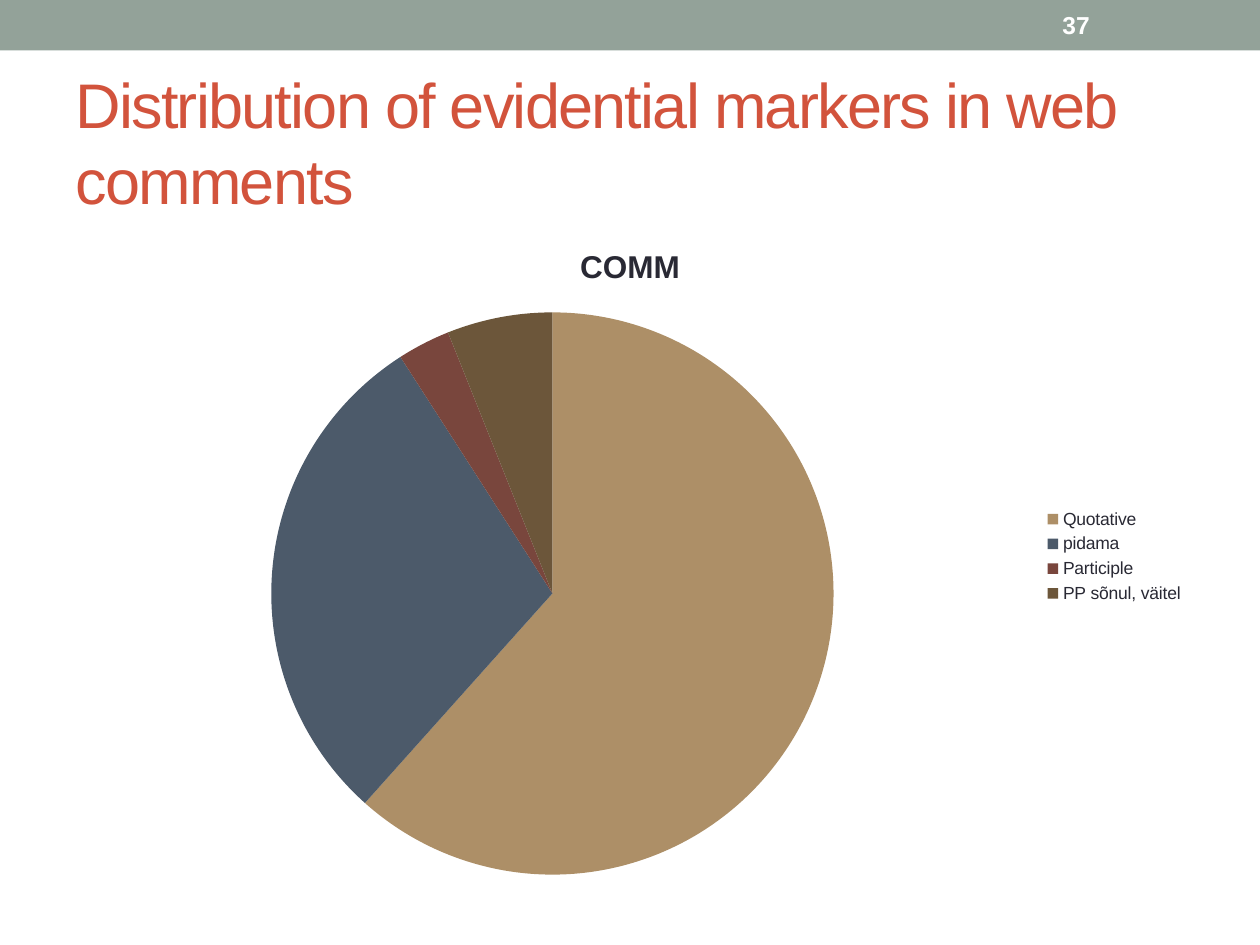
import pptx
import pptx.chart.data
import pptx.dml.color
import pptx.enum.chart
import pptx.enum.shapes
import pptx.enum.text
import pptx.util

RGB = pptx.dml.color.RGBColor
SAGE = RGB(0x93, 0xA2, 0x99)
RED = RGB(0xD2, 0x53, 0x3C)
WHITE = RGB(0xFF, 0xFF, 0xFF)
INK = RGB(0x29, 0x29, 0x34)
TAN = RGB(0xAD, 0x8F, 0x67)
SLATE = RGB(0x4C, 0x5A, 0x6A)
MAROON = RGB(0x79, 0x46, 0x3D)
BROWN = RGB(0x6C, 0x56, 0x3A)

FONT = "Arial"
WIDTH, HEIGHT = 10, 7.5
MARGIN = 0.05 * WIDTH
CONTENT_WIDTH = WIDTH - 2 * MARGIN

# category, value, slice colour
MARKERS = [
    ("Quotative", 61, TAN),
    ("pidama", 29, SLATE),
    ("Participle", 3, MAROON),
    ("PP sõnul, väitel", 6, BROWN),
]


def inches(box):
    return [pptx.util.Inches(length) for length in box]


def style_font(font, size, color, bold=False):
    font.name = FONT
    font.size = pptx.util.Pt(size)
    font.color.rgb = color
    font.bold = bold


def add_text(page, box, text, size, color, bold=False, spacing=0):
    """Add a vertically centred text box; spacing is in points per letter."""
    frame = page.shapes.add_textbox(*inches(box)).text_frame
    frame.word_wrap = True
    frame.vertical_anchor = pptx.enum.text.MSO_ANCHOR.MIDDLE
    span = frame.paragraphs[0].add_run()
    span.text = text
    style_font(span.font, size, color, bold)
    if spacing:
        span.font._element.set("spc", str(int(spacing * 100)))


def add_header(page, box, number):
    left, top, width, height = box
    band = page.shapes.add_shape(pptx.enum.shapes.MSO_SHAPE.RECTANGLE, *inches(box))
    band.shadow.inherit = False
    band.fill.solid()
    band.fill.fore_color.rgb = SAGE
    band.line.fill.background()
    number_box = (left + width / 1.2, top + 0.02, width / 1.2 * 0.14, height - 0.04)
    add_text(page, number_box, number, size=14, color=WHITE, bold=True)


def add_pie(page, box, title, markers):
    data = pptx.chart.data.CategoryChartData()
    data.categories = [name for name, _, _ in markers]
    data.add_series(title, [value for _, value, _ in markers])
    chart = page.shapes.add_chart(
        pptx.enum.chart.XL_CHART_TYPE.PIE, *inches(box), data).chart
    style_font(chart.font, 10, INK)

    chart.has_title = True
    chart.chart_title.include_in_layout = False
    heading = chart.chart_title.text_frame
    heading.text = title
    style_font(heading.paragraphs[0].runs[0].font, 18, INK, bold=True)

    chart.has_legend = True
    chart.legend.position = pptx.enum.chart.XL_LEGEND_POSITION.RIGHT
    chart.legend.include_in_layout = False
    style_font(chart.legend.font, 10, INK)

    plot = chart.plots[0]
    plot.vary_by_categories = True
    for index, (_, _, color) in enumerate(markers):
        fill = plot.series[0].points[index].format.fill
        fill.solid()
        fill.fore_color.rgb = color


def main():
    deck = pptx.Presentation()
    deck.slide_width, deck.slide_height = inches((WIDTH, HEIGHT))
    page = deck.slides.add_slide(deck.slide_layouts[6])
    add_header(page, (0, 0, WIDTH, 0.4), "37")
    add_text(page, (MARGIN, 0.58, CONTENT_WIDTH, 1.08),
             "Distribution of evidential markers in web comments",
             size=36, color=RED, spacing=-1)
    add_pie(page, (MARGIN, 1.75, CONTENT_WIDTH, 5.33), "COMM", MARKERS)
    deck.save("out.pptx")


if __name__ == "__main__":
    main()
